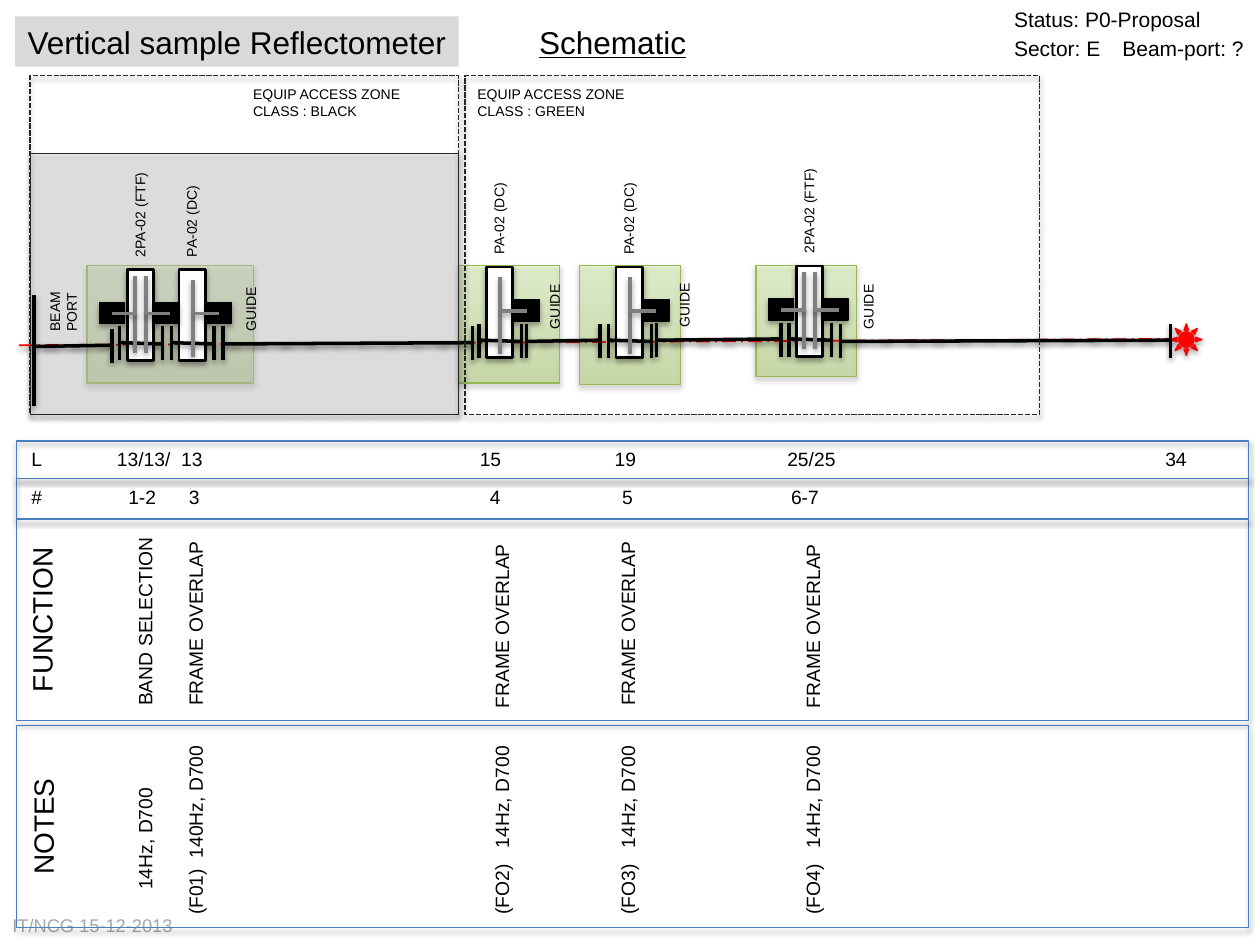
from lxml import etree
from pptx import Presentation
from pptx.dml.color import RGBColor
from pptx.enum.dml import MSO_LINE
from pptx.enum.shapes import MSO_CONNECTOR, MSO_SHAPE
from pptx.enum.text import MSO_ANCHOR, PP_ALIGN
from pptx.oxml.ns import qn
from pptx.util import Inches, Pt

RECTANGLE, SUN = MSO_SHAPE.RECTANGLE, MSO_SHAPE.SUN
STRAIGHT = MSO_CONNECTOR.STRAIGHT
SHORT_DASH, DASH_DOT = MSO_LINE.SQUARE_DOT, MSO_LINE.LONG_DASH_DOT
TOP, LEFT = MSO_ANCHOR.TOP, PP_ALIGN.LEFT
COLUMNS, ROWS, CELL = 100, 75, 0.1
BLACK, WHITE, GREY, RED = "000000", "FFFFFF", "808080", "FF0000"
SILVER, CHARCOAL, BLUE, GREEN = "D9D9D9", "262626", "4B7EBC", "98B955"


def grid(cells):
    return Inches(cells * CELL)


def color(value):
    return RGBColor.from_string(value)


def text_height(size, lines=1):
    return 1 + lines * size / 6


def set_alpha(fill_element, percent):
    for tint in fill_element.iter(qn("a:srgbClr")):
        etree.SubElement(tint, qn("a:alpha"), val=str(percent * 1000))


class Schematic:
    """Draws styled elements on one slide, measured in cells of a 100 by 75 grid."""

    def __init__(self, presentation):
        self.slide = presentation.slides.add_slide(presentation.slide_layouts[5])
        self.shapes = self.slide.shapes

    def start_group(self):
        self.shapes = self.slide.shapes.add_group_shape().shapes

    def end_group(self):
        self.shapes = self.slide.shapes

    def shadow(self, shape, alpha, distance):
        effects = etree.SubElement(shape.element.spPr, qn("a:effectLst"))
        outer = etree.SubElement(effects, qn("a:outerShdw"), blurRad=str(Pt(3.1)),
                                 dist=str(Pt(distance)), dir="5400000", rotWithShape="0")
        tint = etree.SubElement(outer, qn("a:srgbClr"), val=BLACK)
        etree.SubElement(tint, qn("a:alpha"), val=str(alpha * 1000))

    def stroke(self, line, tint, width, dash=None):
        line.color.rgb = color(tint)
        line.width = Pt(width)
        if dash:
            line.dash_style = dash

    def box(self, left, top, width, height, fill=None, line=BLACK, weight=0.75,
            dash=None, kind=RECTANGLE, alpha=None):
        shape = self.shapes.add_shape(kind, *map(grid, (left, top, width, height)))
        if fill is None:
            shape.fill.background()
        elif isinstance(fill, tuple):
            shape.fill.gradient()
            shape.fill.gradient_angle = 90
            for stop, tint in zip(shape.fill.gradient_stops, fill):
                stop.color.rgb = color(tint)
        else:
            shape.fill.solid()
            shape.fill.fore_color.rgb = color(fill)
        if alpha:
            set_alpha(shape.element.spPr, alpha)
        self.stroke(shape.line, line, weight, dash)
        self.shadow(shape, 35, 1.8)

    def line(self, x1, y1, x2, y2, tint=BLACK, weight=2, dash=None):
        connector = self.shapes.add_connector(STRAIGHT, *map(grid, (x1, y1, x2, y2)))
        self.stroke(connector.line, tint, weight, dash)
        self.shadow(connector, 38, 1.6)

    def set_text(self, shape, lines, size, tint=BLACK, underline=None, tabs=()):
        frame = shape.text_frame
        frame_format = {"word_wrap": True, "vertical_anchor": TOP, "margin_left": grid(1),
                        "margin_right": 0, "margin_top": grid(0.5), "margin_bottom": grid(0.5)}
        for name, value in frame_format.items():
            setattr(frame, name, value)
        frame.text = "\n".join(lines)
        font_format = {"name": "Arial", "size": Pt(size), "underline": underline}
        for paragraph in frame.paragraphs:
            paragraph.alignment = LEFT
            if tabs:
                tab_list = etree.SubElement(paragraph._p.get_or_add_pPr(), qn("a:tabLst"))
                for tab in tabs:
                    etree.SubElement(tab_list, qn("a:tab"), pos=str(grid(tab)), algn="l")
            font = paragraph.runs[0].font
            for name, value in font_format.items():
                setattr(font, name, value)
            font.color.rgb = color(tint)

    def title(self, text, left, top, width, size):
        shape = self.slide.shapes.title
        place = {"left": grid(left), "top": grid(top), "width": grid(width),
                 "height": grid(text_height(size))}
        for name, value in place.items():
            setattr(shape, name, value)
        shape.fill.solid()
        shape.fill.fore_color.rgb = color(SILVER)
        self.set_text(shape, [text], size)

    def text(self, lines, left, top, width, size, **style):
        height = text_height(size, len(lines))
        shape = self.shapes.add_textbox(*map(grid, (left, top, width, height)))
        self.set_text(shape, lines, size, **style)

    def upright(self, text, center, bottom, length, size, rows=1, **style):
        height = text_height(size, rows)
        shape = self.shapes.add_textbox(grid(center - length / 2), grid(bottom - (length + height) / 2),
                                        grid(length), grid(height))
        shape.rotation = 270
        self.set_text(shape, [text], size, **style)

    def chopper(self, x, y, double=False):
        self.start_group()
        self.line(x - 0.6, y + 7.2, x - 0.6, y + 4.5)
        self.box(x, y, 2.1, 7.2, WHITE, weight=1.5)
        self.upright("2PA-02 (FTF)" if double else "PA-02 (DC)", x + 1, y, 10, 8)
        self.line(x - 0.5, y + 5.8, x + 2.8, y + 5.9)
        self.line(x + 2.8, y + 7.2, x + 2.8, y + 4.5)
        disc_top = y + (0.5 if double else 0.8)
        for offset in (0.6, 1.5) if double else (1.1,):
            self.line(x + offset, disc_top + 6.1, x + offset, disc_top, GREY)
        for offset in (-2.2, 2.1) if double else (2.2,):
            self.box(x + offset, y + 2.6, 2, 1.7, BLACK)
        for offset in (-1.2, 1.4) if double else (1.2,):
            self.line(x + offset + 2, y + 3.5, x + offset, y + 3.5, GREY)
        self.end_group()

    def guide(self, start, end, y):
        self.start_group()
        self.upright("GUIDE", start + 2.2, y, 5.8, 8)
        self.line(start, y, end, y - 0.1)
        for x in (end, start):
            self.line(x, y + 1.3, x, y - 1.4)
        self.end_group()

    def beam_port(self):
        self.start_group()
        self.upright("BEAM PORT", 5, 27.3, 7.3, 8, rows=2)
        self.line(2.7, 27.5, 8.9, 27.4)
        self.line(8.9, 28.8, 8.9, 26.1)
        self.line(2.7, 32.2, 2.7, 23.4)
        self.end_group()


def draw_beamline(schematic):
    for left, width, height in ((60, 8, 8.8), (46, 8, 9.4), (6.9, 13.2, 9.3), (36.4, 8, 9.3)):
        schematic.box(left, 21.1, width, height, ("A0CA4A", "DAFFA5"), GREEN, alpha=36)
    schematic.box(2.4, 12.2, 34, 20.7, SILVER, CHARCOAL, alpha=36)
    schematic.line(1.5, 27.4, 92.9, 26.9, RED, 1, DASH_DOT)
    schematic.box(92.9, 25.7, 2.5, 2.5, RED, RED, kind=SUN)
    schematic.beam_port()
    schematic.chopper(14.2, 21.4)
    schematic.guide(52.1, 62, 27)
    schematic.chopper(38.6, 21.2)
    schematic.chopper(48.9, 21.2)
    schematic.chopper(10.1, 21.4, double=True)
    schematic.guide(66.7, 92.9, 27.1)
    schematic.chopper(63.2, 21.1, double=True)
    schematic.guide(41.8, 47.6, 27.1)
    schematic.guide(17.7, 37.5, 27.3)
    for left, width, zone, label_left in ((2.4, 34, "BLACK", 19.1), (36.9, 45.6, "GREEN", 36.9)):
        schematic.box(left, 6, width, 26.9, None, CHARCOAL, 1, SHORT_DASH)
        schematic.text(["EQUIP ACCESS ZONE", f"CLASS : {zone}"], label_left, 6.3, 13.8, 8)


def draw_chart(schematic):
    for top, height in ((41.2, 16), (38, 3.2), (57.6, 16), (35, 3)):
        schematic.box(1.3, top, 97.8, height, None, BLUE)
    schematic.text(["L\t13/13/\t13\t15\t19\t25/25\t34"], 1.5, 35, 97.6, 11,
                   tabs=(6.8, 11.9, 35.6, 46.3, 60, 90))
    schematic.text(["#\t1-2\t3\t4\t5\t6-7"], 1.5, 38, 97.6, 11,
                   tabs=(7.7, 12.5, 36.4, 46.9, 60.3))
    schematic.upright("FUNCTION", 3.3, 55.9, 14, 16)
    schematic.upright("NOTES", 3.4, 70.4, 12, 16)
    schematic.upright("BAND SELECTION", 11.5, 57, 16, 11)
    schematic.upright("14Hz, D700", 11.5, 71.6, 12, 11)
    stations = ((15.5, 57, "(F01)\t140Hz, D700", 4.5), (39.8, 57.2, "(FO2)\t14Hz, D700", 5.3),
                (49.8, 57, "(FO3)\t14Hz, D700", 5.3), (64.5, 57.2, "(FO4)\t14Hz, D700", 5.3))
    for center, bottom, note, tab in stations:
        schematic.upright("FRAME OVERLAP", center, bottom, 16, 11)
        schematic.upright(note, center, 73.6, 16, 11, tabs=(tab,))


def main():
    presentation = Presentation()
    presentation.slide_width, presentation.slide_height = grid(COLUMNS), grid(ROWS)
    schematic = Schematic(presentation)
    schematic.text(["IT/NCG 15-12-2013"], 0, 72.1, 15, 10.5, tint="A6A6A6")
    schematic.title("Vertical sample Reflectometer", 1.2, 1.3, 35.2, 18)
    schematic.text(["Schematic"], 41.8, 1.3, 13.8, 18, underline=True)
    schematic.text(["Status: P0-Proposal"], 79.5, 0, 17, 12)
    schematic.text(["Sector: E\tBeam-port: ?"], 79.5, 2.3, 20.5, 12, tabs=(8.6,))
    draw_beamline(schematic)
    draw_chart(schematic)
    presentation.save("out.pptx")


if __name__ == "__main__":
    main()
